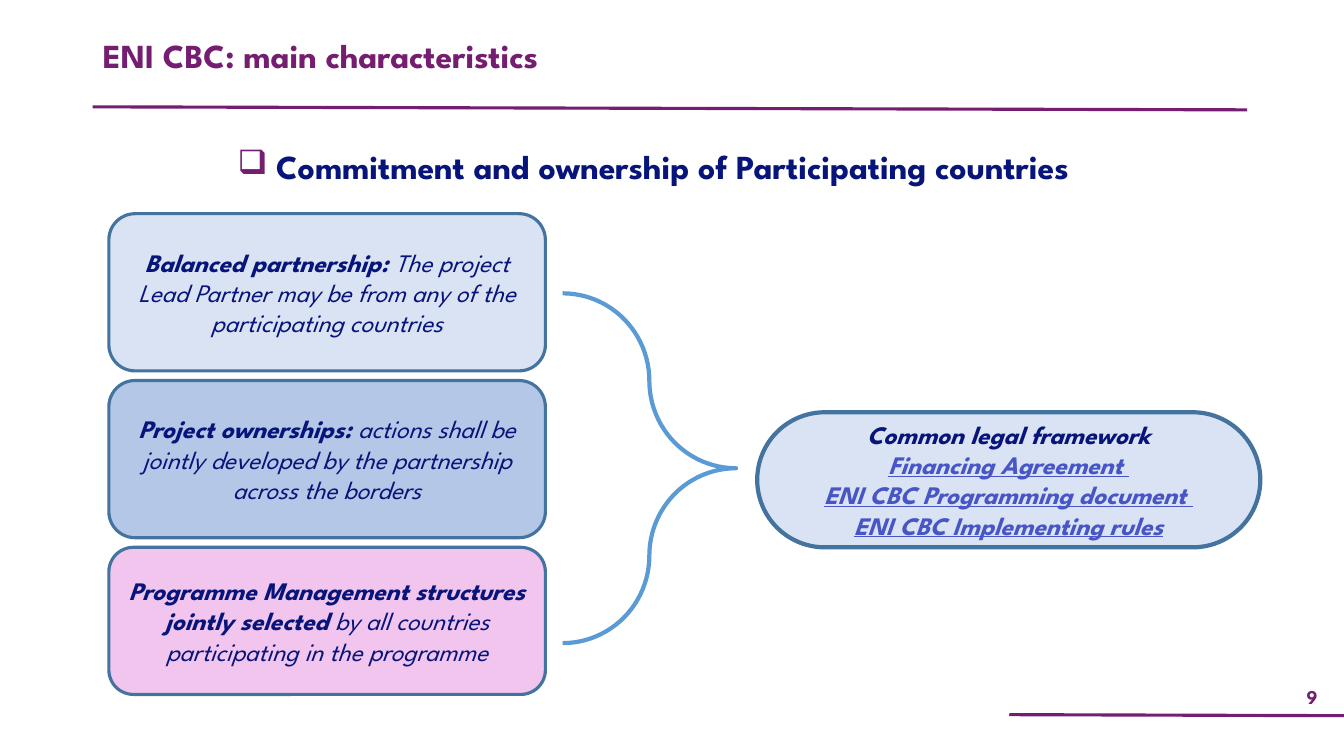
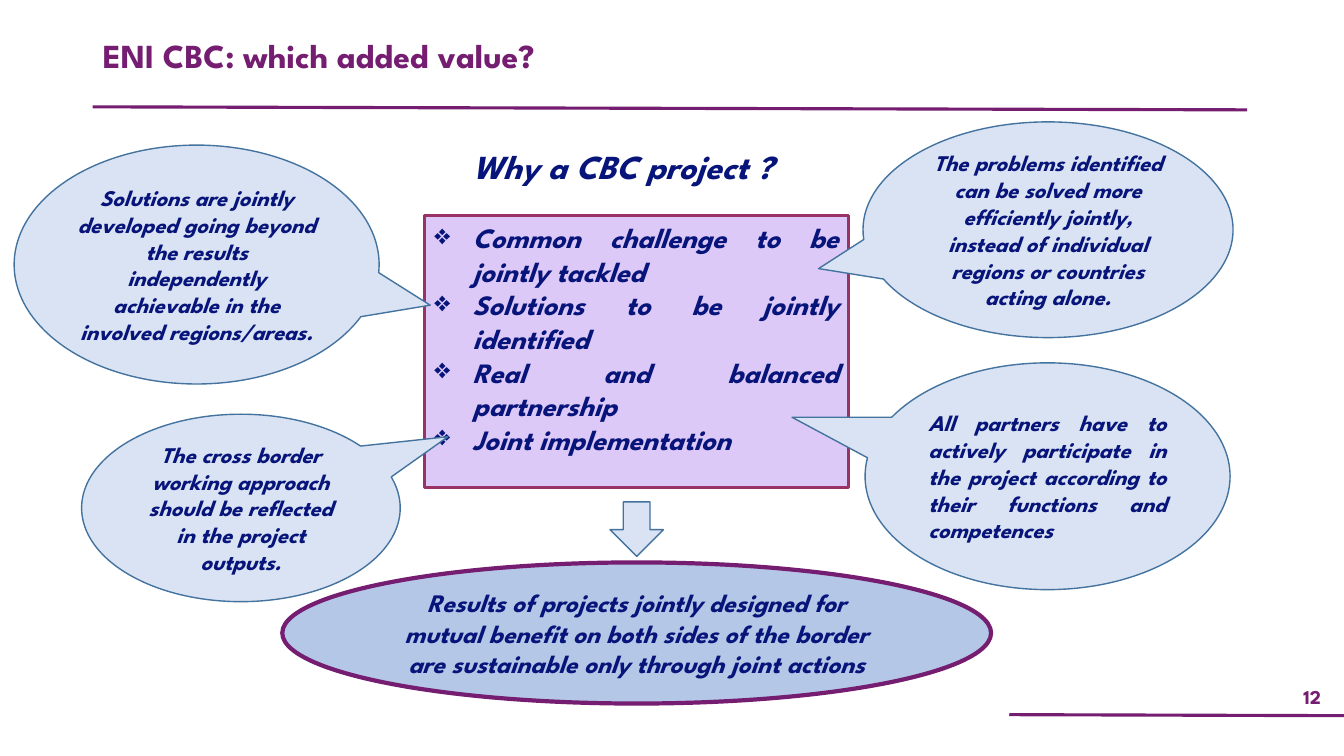
from dataclasses import dataclass

from lxml.etree import SubElement
from pptx import Presentation
from pptx.dml.color import RGBColor
from pptx.enum.shapes import MSO_CONNECTOR, MSO_SHAPE
from pptx.enum.text import MSO_ANCHOR, MSO_AUTO_SIZE, PP_ALIGN
from pptx.oxml.ns import qn
from pptx.util import Inches, Pt


@dataclass(frozen=True)
class Theme:
    font: str = "League Spartan"
    plum: str = "751D70"
    navy: str = "07147A"
    link: str = "4755C6"
    pale: str = "DAE3F3"
    blue: str = "B4C7E7"
    pink: str = "F1C5EE"
    lilac: str = "DDC9F7"
    edge: str = "43739E"
    wine: str = "993366"
    brace: str = "5B9BD5"
    heading: int = 24
    point: int = 20
    body: int = 18
    callout: int = 16
    number: int = 14


THEME = Theme()
PLAIN = {"bold": False}
LINK = {"color": THEME.link, "underline": True}

# Content: a paragraph is a string or a list of (text, format) runs
CHARACTERISTICS = {
    "title": "ENI CBC: main characteristics",
    "number": "9",
    "heading": "Commitment and ownership of Participating countries",
    "cards": [
        ("Balanced partnership: ",
         "The project Lead Partner may be from any of the participating countries",
         THEME.pale, 1.56),
        ("Project ownerships: ",
         "actions shall be jointly developed by the partnership across the borders",
         THEME.blue, 1.56),
        ("Programme Management structures jointly selected ",
         "by all countries participating in the programme",
         THEME.pink, 1.46),
    ],
    "framework": [
        "Common legal framework",
        [("Financing Agreement ", LINK)],
        [("ENI CBC Programming document ", LINK)],
        [("ENI CBC Implementing rules", LINK)],
    ],
}
ADDED_VALUE = {
    "title": "ENI CBC: which added value?",
    "number": "12",
    "heading": "Why a CBC project ?",
    "points": ["Common challenge to be jointly tackled",
               "Solutions to be jointly identified",
               "Real and balanced partnership",
               "Joint implementation"],
    # paragraphs, box, pointer tip, alignment
    "callouts": [
        (["The problems identified can be solved more efficiently jointly,",
          "instead of individual regions or countries acting alone."],
         (8.56, 1.21, 3.67, 2.14), (-0.62, 0.18), PP_ALIGN.CENTER),
        (["Solutions are jointly developed going beyond the results "
          "independently achievable in the involved regions/areas."],
         (0.14, 1.44, 3.62, 2.37), (0.64, 0.17), PP_ALIGN.CENTER),
        (["All partners have to actively participate in the project "
          "according to their functions and competences"],
         (8.58, 3.6, 3.62, 2.25), (-0.7, -0.26), PP_ALIGN.JUSTIFY),
        (["The cross border working approach should be reflected in the "
          "project outputs."],
         (0.81, 4.11, 3.16, 1.86), (0.65, -0.38), PP_ALIGN.CENTER),
    ],
    "result": "Results of projects jointly designed for mutual benefit on both "
              "sides of the border are sustainable only through joint actions",
}

# Shared grid, in inches
MARGIN = 0.92
CARD_LEFT, CARD_TOP, CARD_WIDTH, CARD_PITCH = 1.08, 2.12, 4.33, 1.655


def inches(box):
    return [Inches(length) for length in box]


def add_bullet(paragraph, mark, color):
    props = paragraph._p.get_or_add_pPr()
    props.set("marL", str(Inches(0.38)))
    props.set("indent", str(-Inches(0.38)))
    SubElement(SubElement(props, qn("a:buClr")), qn("a:srgbClr")).set("val", color)
    SubElement(props, qn("a:buChar")).set("char", mark)


def write(holder, paragraphs, size=THEME.body, color=THEME.navy, bold=True,
          italic=True, align=PP_ALIGN.CENTER, anchor=MSO_ANCHOR.MIDDLE,
          spacing=None, bullet=None, bullet_color=THEME.navy):
    frame = holder.text_frame
    frame.word_wrap = True
    frame.auto_size = MSO_AUTO_SIZE.NONE
    frame.vertical_anchor = anchor
    for index, content in enumerate(paragraphs):
        paragraph = frame.add_paragraph() if index else frame.paragraphs[0]
        paragraph.alignment = align
        paragraph.space_before = Pt(0)
        if spacing:
            paragraph.line_spacing = spacing
        if bullet:
            add_bullet(paragraph, bullet, bullet_color)
        for text, change in [(content, {})] if isinstance(content, str) else content:
            run = paragraph.add_run()
            run.text = text
            run.font.name = THEME.font
            run.font.size = Pt(size)
            run.font.bold = change.get("bold", bold)
            run.font.italic = italic
            run.font.underline = change.get("underline")
            run.font.color.rgb = RGBColor.from_string(change.get("color", color))


def add_figure(slide, kind, box, fill, edge=THEME.edge, weight=1.0, adjust=()):
    figure = slide.shapes.add_shape(kind, *inches(box))
    figure.shadow.inherit = False
    if fill:
        figure.fill.solid()
        figure.fill.fore_color.rgb = RGBColor.from_string(fill)
    else:
        figure.fill.background()
    figure.line.color.rgb = RGBColor.from_string(edge)
    figure.line.width = Pt(weight)
    for index, value in enumerate(adjust):
        figure.adjustments[index] = value
    return figure


def add_rule(slide, *ends):
    rule = slide.shapes.add_connector(MSO_CONNECTOR.STRAIGHT, *inches(ends))
    rule.line.color.rgb = RGBColor.from_string(THEME.plum)
    rule.line.width = Pt(2.25)
    SubElement(rule._element.spPr, qn("a:effectLst"))


def start_slide(deck, content, heading_width, **heading_format):
    slide = deck.slides.add_slide(deck.slide_layouts[5])
    # Rules and slide number
    add_rule(slide, MARGIN, 1.06, 12.37, 1.09)
    number = slide.shapes.add_textbox(*inches((12.7, 6.73, 0.63, 0.36)))
    write(number, [content["number"]], size=THEME.number, color=THEME.plum,
          italic=False)
    add_rule(slide, 10.01, 7.09, 13.33, 7.1)
    # Title and heading
    title = slide.shapes.title
    title.left, title.top, title.width, title.height = inches((MARGIN, 0.34, 9.73, 0.65))
    write(title, [content["title"]], size=THEME.heading, color=THEME.plum,
          italic=False, align=PP_ALIGN.JUSTIFY, anchor=MSO_ANCHOR.TOP, spacing=0.9)
    heading = slide.shapes.add_textbox(*inches((MARGIN, 1.44, heading_width, 0.6)))
    write(heading, [content["heading"]], size=THEME.heading,
          anchor=MSO_ANCHOR.TOP, spacing=0.9, **heading_format)
    return slide


def build_characteristics(deck, content):
    slide = start_slide(deck, content, 11.12, italic=False, bullet="❑",
                        bullet_color=THEME.plum)
    # Stack of cards
    for row, (lead, detail, fill, height) in enumerate(content["cards"]):
        box = (CARD_LEFT, CARD_TOP + row * CARD_PITCH, CARD_WIDTH, height)
        card = add_figure(slide, MSO_SHAPE.ROUNDED_RECTANGLE, box, fill, weight=2.25)
        write(card, [[(lead, {}), (detail, PLAIN)]])
    # Brace leading to the legal framework
    brace = add_figure(slide, MSO_SHAPE.LEFT_BRACE, (5.58, 2.91, 1.72, 3.47), None,
                       edge=THEME.brace, weight=3, adjust=(0.785, 0.5))
    brace.rotation = 180
    framework = add_figure(slide, MSO_SHAPE.ROUNDED_RECTANGLE,
                           (7.51, 4.09, 4.99, 1.34), THEME.pale, weight=3,
                           adjust=(0.5,))
    write(framework, content["framework"])


def build_added_value(deck, content):
    slide = start_slide(deck, content, 10.51)
    # Central list
    reasons = add_figure(slide, MSO_SHAPE.RECTANGLE, (4.21, 2.14, 4.21, 2.7),
                         THEME.lilac, edge=THEME.wine, weight=2.25)
    write(reasons, content["points"], size=THEME.point, align=PP_ALIGN.JUSTIFY,
          anchor=MSO_ANCHOR.TOP, bullet="❖")
    # Callouts around it
    for paragraphs, box, tip, align in content["callouts"]:
        callout = add_figure(slide, MSO_SHAPE.OVAL_CALLOUT, box, THEME.pale, adjust=tip)
        write(callout, paragraphs, size=THEME.callout, align=align)
    # Result below
    result = add_figure(slide, MSO_SHAPE.OVAL, (2.8, 5.58, 7.03, 1.4), THEME.blue,
                        edge=THEME.plum, weight=3)
    write(result, [content["result"]])
    add_figure(slide, MSO_SHAPE.DOWN_ARROW, (6.05, 4.98, 0.53, 0.54), THEME.pale)


def main():
    deck = Presentation()
    deck.slide_width, deck.slide_height = inches((13.33, 7.5))
    build_characteristics(deck, CHARACTERISTICS)
    build_added_value(deck, ADDED_VALUE)
    deck.save("out.pptx")


if __name__ == "__main__":
    main()
